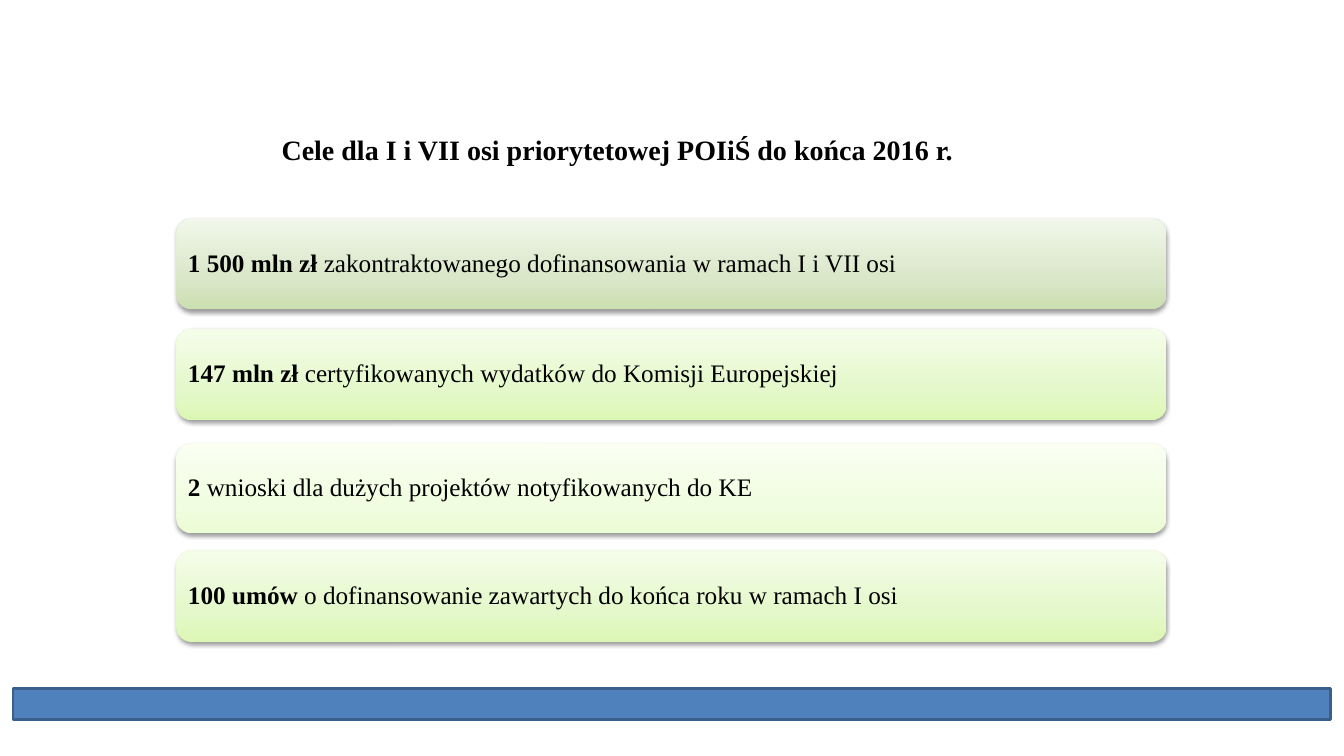
"""Builds the slide with the goals for priority axes I and VII to the end of 2016."""
from copy import deepcopy
from lxml import etree
from pptx import Presentation
from pptx.dml.color import RGBColor
from pptx.enum.shapes import MSO_SHAPE
from pptx.enum.text import MSO_ANCHOR, PP_ALIGN
from pptx.oxml import parse_xml
from pptx.oxml.ns import nsdecls, qn
from pptx.util import Inches, Pt

FONT = "Times New Roman"
BLACK = RGBColor(0x00, 0x00, 0x00)
BLUE = RGBColor(0x4F, 0x81, 0xBD)
NAVY = RGBColor(0x3A, 0x5F, 0x8C)
SAGE = [RGBColor(0xCC, 0xDF, 0xB1), RGBColor(0xDA, 0xE7, 0xC9), RGBColor(0xF1, 0xF7, 0xEA)]
LIME = [RGBColor(0xDC, 0xF7, 0xB5), RGBColor(0xE5, 0xF8, 0xCB), RGBColor(0xF5, 0xFD, 0xEA)]
PALE = [RGBColor(0xEC, 0xFC, 0xD5), RGBColor(0xF1, 0xFD, 0xE1), RGBColor(0xFA, 0xFF, 0xF2)]
SHADOW = (
    f'<a:outerShdw {nsdecls("a")} blurRad="40000" dist="20000" dir="5400000" rotWithShape="0">'
    '<a:srgbClr val="000000"><a:alpha val="38000"/></a:srgbClr></a:outerShdw>'
)


def add_run(para, text, size, bold):
    run = para.add_run()
    run.text = text
    run.font.name = FONT
    run.font.size = Pt(size)
    run.font.bold = bold
    run.font.color.rgb = BLACK


deck = Presentation()
deck.slide_width = Inches(13.33)
deck.slide_height = Inches(7.5)
slide = deck.slides.add_slide(deck.slide_layouts[6])

band = slide.shapes.add_shape(
    MSO_SHAPE.FLOWCHART_PROCESS, Inches(0.13), Inches(6.83), Inches(13.07), Inches(0.31))
band.shadow.inherit = False
band.fill.solid()
band.fill.fore_color.rgb = BLUE
band.line.color.rgb = NAVY
band.line.width = Pt(2)

title = slide.shapes.add_textbox(Inches(0.46), Inches(0.92), Inches(11.33), Inches(0.78))
frame = title.text_frame
frame.word_wrap = True
frame.vertical_anchor = MSO_ANCHOR.BOTTOM
para = frame.paragraphs[0]
para.alignment = PP_ALIGN.CENTER
add_run(para, "Cele dla I i VII osi priorytetowej POIiŚ do końca 2016 r.", 20, True)

goals = [
    (2.17, 0.9, SAGE, "1 500 mln zł ", "zakontraktowanego dofinansowania w ramach I i VII osi"),
    (3.26, 0.91, LIME, "147 mln zł ", "certyfikowanych wydatków do Komisji Europejskiej"),
    (4.4, 0.89, PALE, "2 ", "wnioski dla dużych projektów notyfikowanych do KE"),
    (5.46, 0.91, LIME, "100 umów ", "o dofinansowanie zawartych do końca roku w ramach I osi"),
]
for top, height, shades, value, label in goals:
    card = slide.shapes.add_shape(
        MSO_SHAPE.ROUNDED_RECTANGLE, Inches(1.75), Inches(top), Inches(9.82), Inches(height))
    card.line.fill.background()
    card.shadow.inherit = False
    props = card.element.spPr
    props.find(qn("a:effectLst")).append(parse_xml(SHADOW))

    card.fill.gradient()
    card.fill.gradient_angle = 90
    stops = props.find(qn("a:gradFill")).find(qn("a:gsLst"))
    stops.insert(1, deepcopy(stops[0]))
    for stop, place, shade in zip(card.fill.gradient_stops, (0, 0.35, 1), shades):
        stop.position = place
        stop.color.rgb = shade

    frame = card.text_frame
    frame.word_wrap = True
    frame.vertical_anchor = MSO_ANCHOR.MIDDLE
    frame.margin_left = frame.margin_right = Inches(0.07)
    frame.margin_top = frame.margin_bottom = Inches(0.07)
    para = frame.paragraphs[0]
    para.alignment = PP_ALIGN.LEFT
    para.line_spacing = 0.9
    add_run(para, value, 18, True)
    add_run(para, label, 18, False)

deck.save("out.pptx")
